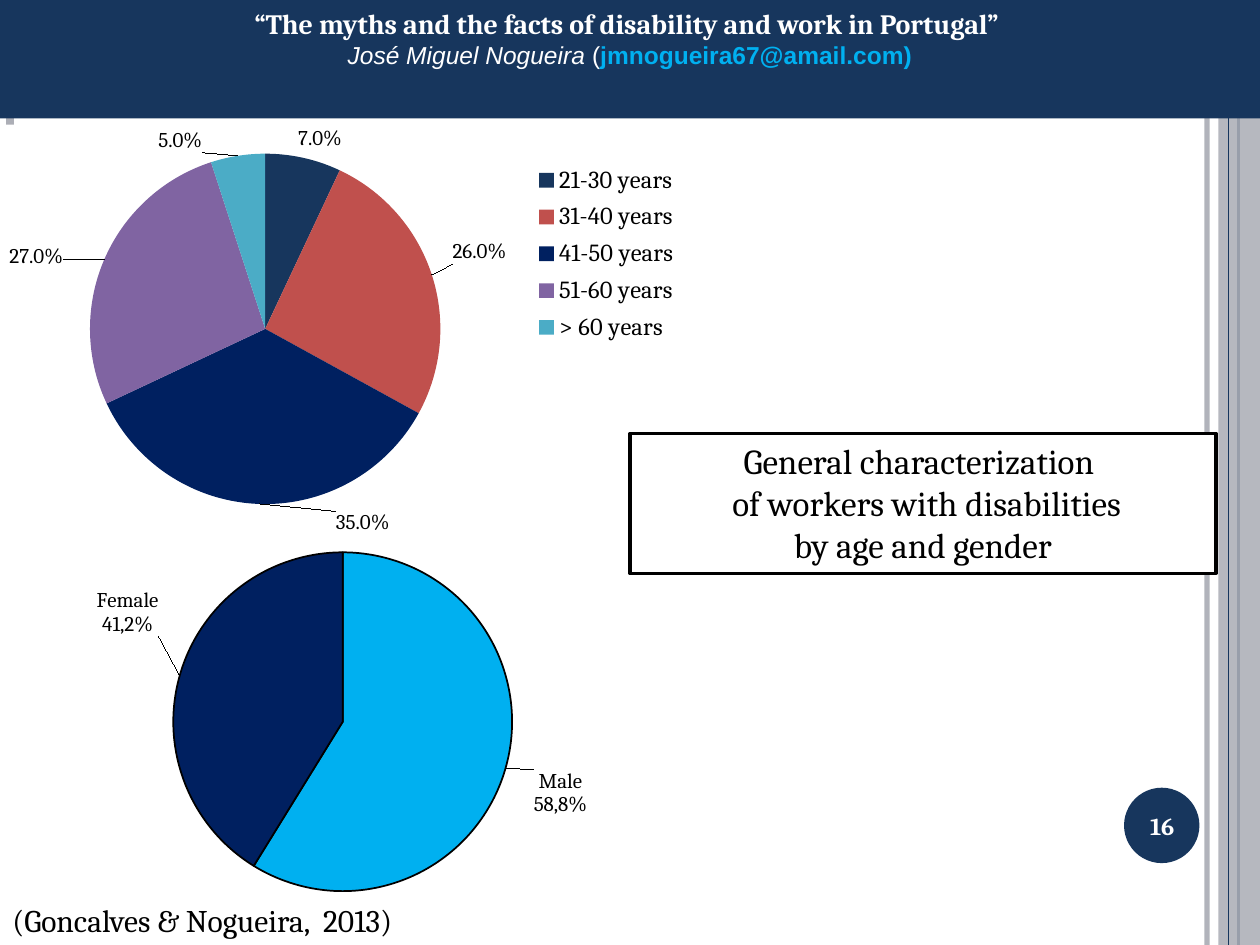
from lxml.etree import SubElement
from pptx import Presentation
from pptx.chart.data import CategoryChartData
from pptx.dml.color import RGBColor
from pptx.enum.chart import XL_CHART_TYPE as ChartType
from pptx.enum.chart import XL_LABEL_POSITION as LabelPos
from pptx.enum.chart import XL_LEGEND_POSITION as LegendPos
from pptx.enum.shapes import MSO_CONNECTOR as Connector
from pptx.enum.shapes import MSO_SHAPE as Shape
from pptx.enum.text import MSO_ANCHOR as Anchor
from pptx.enum.text import PP_ALIGN as Align
from pptx.oxml import parse_xml
from pptx.oxml.ns import nsdecls, qn
from pptx.util import Cm, Pt

NAVY, GREY, WHITE, BLACK = "17365D", "ACAEB6", "FFFFFF", "000000"
SKY, DEEP_BLUE = "00B0F0", "002060"
HEIGHT = 19.05


def paint(color_format, hex_code):
    """Give a colour format the RGB value of a hex string."""
    color_format.rgb = RGBColor.from_string(hex_code)


def fill_solid(target, hex_code):
    """Fill an element with one colour."""
    target.fill.solid()
    paint(target.fill.fore_color, hex_code)


def set_alpha(element, percent):
    """Make the first RGB colour below an element partly transparent."""
    color = next(element.iter(qn("a:srgbClr")))
    SubElement(color, qn("a:alpha")).set("val", str(percent * 1000))


def style_font(font, size, color=BLACK, **values):
    """Apply size, colour and other format values to a font."""
    for name, value in {"name": "Cambria", "size": Pt(size), **values}.items():
        setattr(font, name, value)
    paint(font.color, color)


def write(shape, paragraphs, align=Align.LEFT, anchor=Anchor.TOP, wrap=True):
    """Write paragraphs of (text, format) runs into a shape."""
    frame = shape.text_frame
    frame.word_wrap, frame.vertical_anchor = wrap, anchor
    for index, runs in enumerate(paragraphs):
        paragraph = frame.paragraphs[0] if index == 0 else frame.add_paragraph()
        paragraph.alignment = align
        for text, values in runs:
            run = paragraph.add_run()
            run.text = text
            style_font(run.font, **values)


def add_block(slide, kind, box, fill, border=None, alpha=None):
    """Add a filled preset shape with an optional border."""
    block = slide.shapes.add_shape(kind, *map(Cm, box))
    block.shadow.inherit = False
    fill_solid(block, fill)
    if alpha:
        set_alpha(block.fill._xPr, alpha)
    if border:
        paint(block.line.color, border)
        block.line.width = Pt(2)
    else:
        block.line.fill.background()
    return block


def add_stripe(slide, x, color, width, alpha=None):
    """Add a vertical line over the full slide height."""
    stripe = slide.shapes.add_connector(Connector.STRAIGHT, Cm(x), Cm(0), Cm(x), Cm(HEIGHT))
    paint(stripe.line.color, color)
    stripe.line.width = Pt(width)
    properties = stripe.element.spPr
    if alpha:
        set_alpha(properties, alpha)
    SubElement(properties, qn("a:effectLst"))


def manual_layout(x, y, w=None, h=None, inner=False):
    """Build a manual chart layout; without a size it is an offset."""
    parts = [("layoutTarget", "inner")] if inner else []
    if w:
        parts += [("xMode", "edge"), ("yMode", "edge")]
    parts += [("x", x), ("y", y)]
    if w:
        parts += [("w", w), ("h", h)]
    body = "".join(f'<c:{tag} val="{value}"/>' for tag, value in parts)
    return parse_xml(f'<c:layout {nsdecls("c")}><c:manualLayout>{body}</c:manualLayout></c:layout>')


def add_pie(slide, box, slices, plot_box, number_format, outline=None):
    """Add a pie from (category, value, colour, label offset, label text) slices."""
    pie_data = CategoryChartData(number_format=number_format)
    pie_data.categories = [item[0] for item in slices]
    pie_data.add_series("Series 1", [item[1] for item in slices])
    chart = slide.shapes.add_chart(ChartType.PIE, *map(Cm, box), pie_data).chart
    chart.has_title = chart.has_legend = False
    style_font(chart.font, 12)
    chart.element.find(qn("c:chart")).addnext(parse_xml(
        f'<c:spPr {nsdecls("c", "a")}><a:solidFill><a:srgbClr val="{WHITE}"/></a:solidFill>'
        "<a:ln><a:noFill/></a:ln></c:spPr>"))

    plot_area = next(chart.element.iter(qn("c:plotArea")))
    for automatic in plot_area.findall(qn("c:layout")):
        plot_area.remove(automatic)
    plot_area.insert(0, manual_layout(*plot_box, inner=True))

    plot = chart.plots[0]
    plot.vary_by_categories = True
    series = plot.series[0]
    labels = series.data_labels
    for name, value in {"show_value": True, "number_format": number_format,
                        "number_format_is_linked": False,
                        "position": LabelPos.OUTSIDE_END}.items():
        setattr(labels, name, value)
    style_font(labels.font, 12)

    for index, (_, _, color, offset, text) in enumerate(slices):
        point = series.points[index]
        fill_solid(point.format, color)
        if outline:
            paint(point.format.line.color, outline)
            point.format.line.width = Pt(1)
        label = point.data_label
        if text:
            label.text_frame.text = text
            for paragraph in label.text_frame.paragraphs:
                for run in paragraph.runs:
                    style_font(run.font, 12, bold=False)
        else:
            style_font(label.font, 12)
        label.position = LabelPos.OUTSIDE_END
    for label, item in zip(series.data_labels._element.findall(qn("c:dLbl")), slices):
        for automatic in label.findall(qn("c:layout")):
            label.remove(automatic)
        label.insert(1, manual_layout(*item[3]))
    return chart


def add_legend(chart, box, size):
    """Show the legend on the right in a fixed area."""
    chart.has_legend = True
    legend = chart.legend
    legend.position, legend.include_in_layout = LegendPos.RIGHT, False
    style_font(legend.font, size)
    legend._element.find(qn("c:legendPos")).addnext(manual_layout(*box))


def main():
    """Build the slide and save it."""
    deck = Presentation()
    deck.slide_width, deck.slide_height = Cm(25.4), Cm(HEIGHT)
    slide = deck.slides.add_slide(deck.slide_layouts[6])

    add_stripe(slide, 24.33, GREY, 3, alpha=93)
    add_stripe(slide, 0.2, GREY, 4.5)
    add_stripe(slide, 24.97, NAVY, 1.5)
    add_block(slide, Shape.RECTANGLE, (24.56, 0, 0.84, HEIGHT), GREY, alpha=87)
    add_stripe(slide, 24.77, NAVY, 0.75)

    add_block(slide, Shape.OVAL, (22.66, 15.88, 1.52, 1.52), NAVY)
    page_number = slide.shapes.add_textbox(*map(Cm, (22.58, 15.93, 1.7, 1.45)))
    write(page_number, [[("16", {"size": 14, "color": WHITE, "bold": True})]],
          Align.CENTER, Anchor.MIDDLE)

    header = add_block(slide, Shape.RECTANGLE, (0, 0, 25.4, 2.39), NAVY)
    author = {"size": 14, "color": WHITE, "name": "Arial"}
    write(header, [
        [("“The myths and the facts of disability and work in Portugal” ",
          {"size": 16, "color": WHITE, "bold": True})],
        [("José Miguel Nogueira ", {**author, "italic": True}),
         ("(", author),
         ("jmnogueira67@amail.com)", {**author, "color": SKY, "bold": True})],
    ], Align.CENTER)

    ages = [
        ("21-30 years", 0.07, NAVY, (-0.01, 0), None),
        ("31-40 years", 0.26, "C0504D", (0.02, -0.02), None),
        ("41-50 years", 0.35, DEEP_BLUE, (0.15, 0), None),
        ("51-60 years", 0.27, "8064A2", (-0.05, 0.03), None),
        ("> 60 years", 0.05, "4BACC6", (-0.05, 0.01), None),
    ]
    age_pie = add_pie(slide, (0, 2.51, 13.89, 8.41), ages, (0.13, 0.07, 0.51, 0.84), "####.0%")
    add_legend(age_pie, (0.77, 0.08, 0.22, 0.46), 14)

    genders = [
        ("Male", 58.8, SKY, (0.03, 0), "Male\n58,8%"),
        ("Female", 41.2, DEEP_BLUE, (-0.02, -0.09), "Female\n41,2%"),
    ]
    add_pie(slide, (0, 10.72, 14.1, 8.33), genders, (0.24, 0.05, 0.5, 0.82), "0.0", BLACK)

    citation = slide.shapes.add_textbox(*map(Cm, (0, 18.03, 9.53, 1.02)))
    write(citation, [[("(Goncalves & Nogueira,  2013)", {"size": 18})]], wrap=False)

    topic = add_block(slide, Shape.RECTANGLE, (12.7, 8.74, 11.81, 2.82), WHITE, BLACK)
    topic_lines = ("General characterization ", " of workers with disabilities", "by age and gender")
    write(topic, [[(line, {"size": 20})] for line in topic_lines], Align.CENTER)

    deck.save("out.pptx")


if __name__ == "__main__":
    main()
